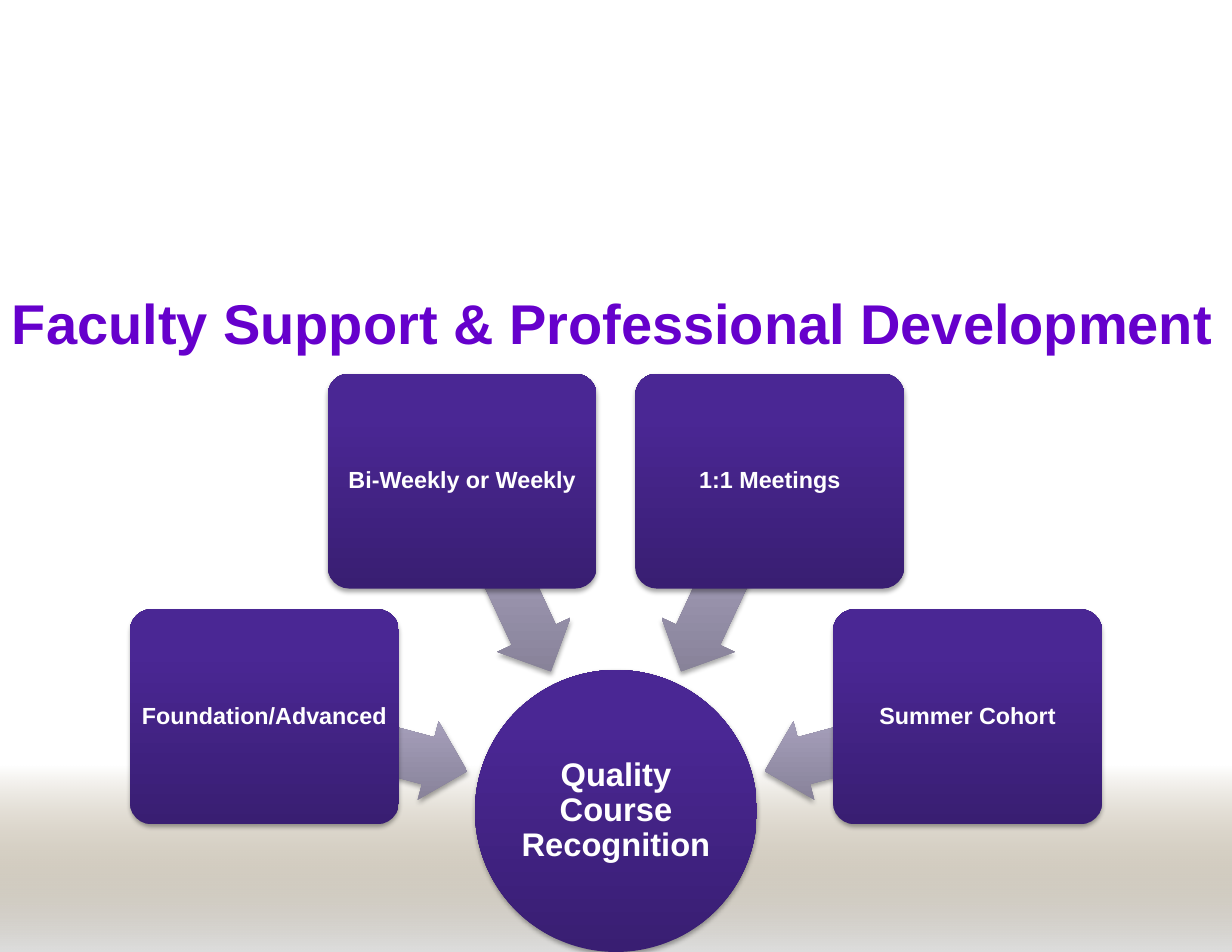
import math

import pptx
import pptx.util
from lxml import etree
from pptx.dml.color import RGBColor
from pptx.enum.shapes import MSO_SHAPE
from pptx.enum.text import MSO_ANCHOR, PP_ALIGN
from pptx.oxml.ns import qn

SCALE = 914400 / 112
SLIDE_SIZE = (1232, 952)
FONT = "Arial"
COLORS = {"title": "6600CC", "label": "FFFFFF", "shadow": "000000"}
GRADIENTS = {
    "band": [(0, "765E2F", 0), (100, "DDDDDD", 100)],
    "node": [(0, "391E72", 100), (80, "4A2794", 100), (100, "4A2597", 100)],
    "arrow": [(0, "847F95", 100), (80, "ACA5C2", 100), (100, "ACA6C3", 100)],
}

TITLE = "Faculty Support & Professional Development"
HUB = "Quality Course Recognition"
SUPPORTS = [
    ("Foundation/Advanced", 15),
    ("Bi-Weekly or Weekly", 65),
    ("1:1 Meetings", 115),
    ("Summer Cohort", 165),
]

HUB_CENTER = (616, 811)
HUB_SIZE = (282, 282)
BOX_SIZE = (269, 215)
ARROW_SIZE = (210, 81)
BOX_RADIUS = 364
ARROW_RADIUS = 259


def px(length):
    return pptx.util.Emu(round(length * SCALE))


def set_gradient(shape, stops, angle):
    shape.fill.background()
    properties = shape.element.spPr
    gradient = etree.Element(qn("a:gradFill"), rotWithShape="0")
    stop_list = etree.SubElement(gradient, qn("a:gsLst"))
    for position, color, opacity in stops:
        stop = etree.SubElement(stop_list, qn("a:gs"), pos=str(position * 1000))
        fill = etree.SubElement(stop, qn("a:srgbClr"), val=color)
        if opacity < 100:
            etree.SubElement(fill, qn("a:alpha"), val=str(opacity * 1000))
    etree.SubElement(gradient, qn("a:lin"), ang=str(angle * 60000), scaled="0")
    properties.replace(properties.find(qn("a:noFill")), gradient)


def add_shadow(shape):
    effects = shape.element.spPr.find(qn("a:effectLst"))
    shadow = etree.SubElement(
        effects, qn("a:outerShdw"), blurRad=str(pptx.util.Pt(3.1)),
        dist=str(pptx.util.Pt(1.8)), dir="5400000", rotWithShape="0")
    color = etree.SubElement(shadow, qn("a:srgbClr"), val=COLORS["shadow"])
    etree.SubElement(color, qn("a:alpha"), val="35000")


def add_filled(slide, kind, left, top, size, gradient, angle):
    shape = slide.shapes.add_shape(kind, px(left), px(top), *map(px, size))
    shape.shadow.inherit = False
    shape.line.fill.background()
    set_gradient(shape, GRADIENTS[gradient], angle)
    return shape


def add_centered(slide, kind, center, size, gradient):
    left, top = (middle - length / 2 for middle, length in zip(center, size))
    shape = add_filled(slide, kind, left, top, size, gradient, 270)
    add_shadow(shape)
    return shape


def set_text(shape, text, size, color, align, inset_x, inset_y):
    frame = shape.text_frame
    frame.text = text
    frame.word_wrap = True
    frame.vertical_anchor = MSO_ANCHOR.MIDDLE
    frame.margin_left = frame.margin_right = px(inset_x)
    frame.margin_top = frame.margin_bottom = px(inset_y)
    paragraph = frame.paragraphs[0]
    paragraph.alignment = align
    font = paragraph.runs[0].font
    font.name = FONT
    font.size = pptx.util.Pt(size)
    font.bold = True
    font.color.rgb = RGBColor.from_string(COLORS[color])
    return paragraph


def add_node(slide, kind, center, size, text, font_size, inset):
    node = add_centered(slide, kind, center, size, "node")
    paragraph = set_text(node, text, font_size, "label", PP_ALIGN.CENTER, inset, inset)
    paragraph.line_spacing = 0.9
    return node


def around_hub(radius, angle):
    radians = math.radians(angle)
    return (HUB_CENTER[0] - radius * math.cos(radians),
            HUB_CENTER[1] - radius * math.sin(radians))


def main():
    presentation = pptx.Presentation()
    presentation.slide_width, presentation.slide_height = map(px, SLIDE_SIZE)
    slide = presentation.slides.add_slide(presentation.slide_layouts[6])

    add_filled(slide, MSO_SHAPE.RECTANGLE, 0, 766, (1232, 186), "band", 90)
    title = slide.shapes.add_textbox(px(0), px(252), px(1232), px(140))
    set_text(title, TITLE, 36, "title", PP_ALIGN.LEFT, 12, 7)

    add_node(slide, MSO_SHAPE.OVAL, HUB_CENTER, HUB_SIZE, HUB, 21, 1)
    for label, angle in SUPPORTS:
        arrow = add_centered(slide, MSO_SHAPE.LEFT_ARROW,
                             around_hub(ARROW_RADIUS, angle), ARROW_SIZE, "arrow")
        arrow.adjustments[0] = 0.6
        arrow.adjustments[1] = 0.5
        arrow.rotation = 180 + angle
        box = add_node(slide, MSO_SHAPE.ROUNDED_RECTANGLE,
                       around_hub(BOX_RADIUS, angle), BOX_SIZE, label, 15, 3)
        box.adjustments[0] = 0.1

    presentation.save("out.pptx")


if __name__ == "__main__":
    main()
